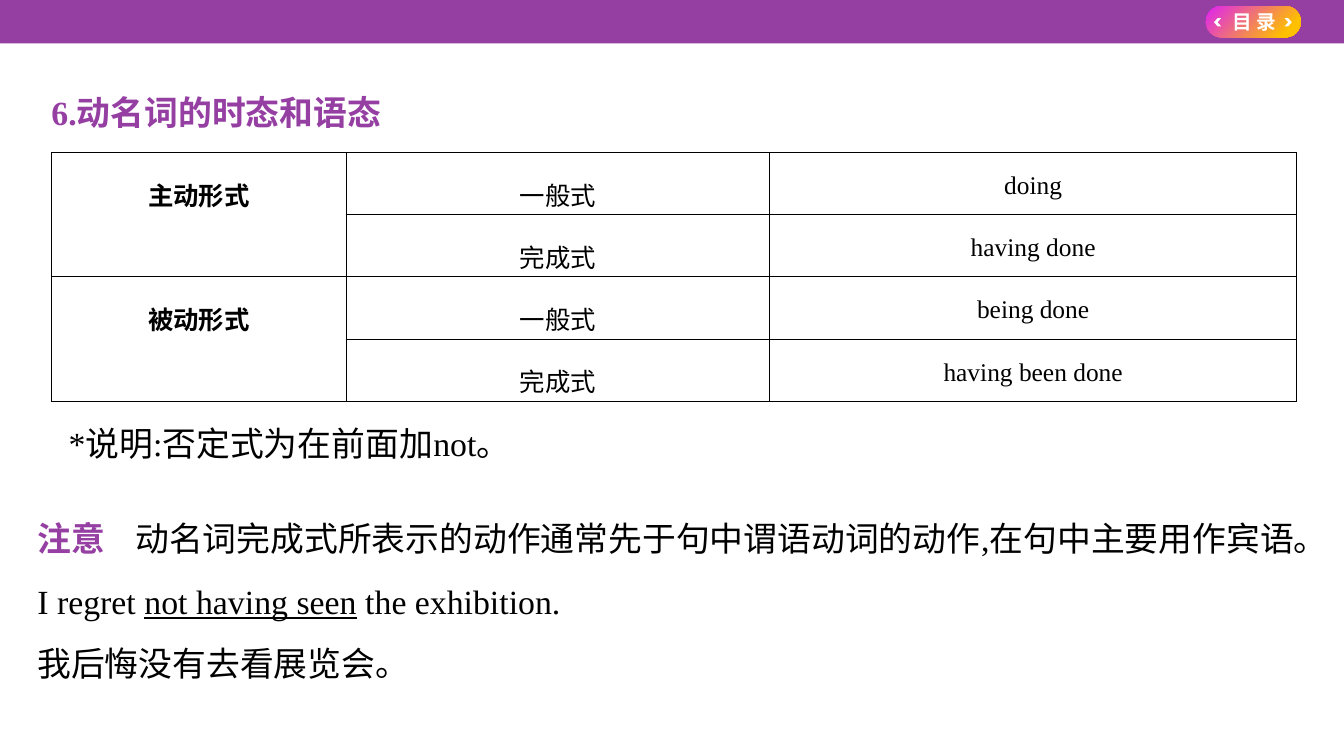
from lxml import etree
from pptx import Presentation
from pptx.dml.color import RGBColor
from pptx.enum.shapes import MSO_SHAPE
from pptx.enum.text import MSO_ANCHOR, PP_ALIGN
from pptx.oxml.ns import qn
from pptx.util import Cm, Inches, Pt

RECTANGLE = MSO_SHAPE.RECTANGLE
PILL = MSO_SHAPE.FLOWCHART_TERMINATOR
CHEVRON = MSO_SHAPE.CHEVRON
CENTER = PP_ALIGN.CENTER
MIDDLE = MSO_ANCHOR.MIDDLE

PURPLE = RGBColor(0x95, 0x3F, 0xA3)
MAGENTA = RGBColor(0xDE, 0x21, 0xF5)
AMBER = RGBColor(0xFF, 0xC0, 0x00)
WHITE = RGBColor(0xFF, 0xFF, 0xFF)
BLACK = RGBColor(0x00, 0x00, 0x00)

SERIF = "Times New Roman"
SANS = "Noto Sans CJK SC"
BODY_SIZE = 24.1
TABLE_SIZE = 18.1

COLUMN_WIDTHS = (2.92, 4.19, 5.22)
TABLE_HEIGHT = 2.46
VERB_FORMS = (
    ("主动形式", "一般式", "doing"),
    ("", "完成式", "having done"),
    ("被动形式", "一般式", "being done"),
    ("", "完成式", "having been done"),
)


def style_span(span, size, color=BLACK, bold=False, underline=False, latin=SERIF):
    font = span.font
    font.size = Pt(size)
    font.bold = bold
    font.underline = underline
    font.color.rgb = color
    font.name = latin
    east_asian = etree.SubElement(span._r.get_or_add_rPr(), qn("a:ea"))
    east_asian.set("typeface", SANS)


def add_figure(page, kind, left, top, width, height, color=None):
    figure = page.shapes.add_shape(
        kind, Inches(left), Inches(top), Inches(width), Inches(height))
    figure.shadow.inherit = False
    figure.line.fill.background()
    if color is not None:
        figure.fill.solid()
        figure.fill.fore_color.rgb = color
    return figure


def add_text(page, left, top, width, height, paragraphs):
    """Add a body text box; each paragraph is a list of (text, style) spans."""
    box = page.shapes.add_textbox(
        Inches(left), Inches(top), Inches(width), Inches(height))
    frame = box.text_frame
    frame.word_wrap = True
    frame.margin_left = frame.margin_right = 0
    frame.margin_top = frame.margin_bottom = 0
    for index, spans in enumerate(paragraphs):
        para = frame.add_paragraph() if index else frame.paragraphs[0]
        para.line_spacing = 1.5
        para.space_before = Pt(1.4)
        for text, style in spans:
            span = para.add_run()
            span.text = text
            style_span(span, BODY_SIZE, **style)
    return box


def add_tab_stop(para, position):
    stops = etree.SubElement(para._p.get_or_add_pPr(), qn("a:tabLst"))
    etree.SubElement(stops, qn("a:tab"), pos=str(Inches(position)), algn="l")


def add_header(page):
    add_figure(page, RECTANGLE, 0, 0, 13.31, 0.43, PURPLE)
    button = add_figure(page, PILL, 11.94, 0.06, 0.94, 0.31)
    button.fill.gradient()
    button.fill.gradient_angle = 315
    stops = zip(button.fill.gradient_stops, (MAGENTA, AMBER), (0, 0.84))
    for stop, color, position in stops:
        stop.color.rgb = color
        stop.position = position

    label = page.shapes.add_textbox(
        Inches(12.09), Inches(0.04), Inches(0.66), Inches(0.34))
    frame = label.text_frame
    frame.word_wrap = True
    frame.vertical_anchor = MIDDLE
    frame.text = "目 录"
    para = frame.paragraphs[0]
    para.alignment = CENTER
    style_span(para.runs[0], 14, WHITE, bold=True, latin=SANS)

    for left, rotation in ((12.72, 0), (12.02, 180)):
        arrow = add_figure(page, CHEVRON, left, 0.18, 0.07, 0.08, WHITE)
        arrow.rotation = rotation


def add_borders(cell):
    properties = cell._tc.get_or_add_tcPr()
    for side in ("a:lnL", "a:lnR", "a:lnT", "a:lnB"):
        line = etree.SubElement(properties, qn(side), w=str(Pt(0.75)))
        fill = etree.SubElement(line, qn("a:solidFill"))
        etree.SubElement(fill, qn("a:srgbClr"), val=str(BLACK))


def fill_cell(cell, text, bold):
    cell.margin_left = cell.margin_right = Inches(0.05)
    cell.margin_top = cell.margin_bottom = Inches(0.05)
    add_borders(cell)
    cell.fill.background()
    cell.text = text
    para = cell.text_frame.paragraphs[0]
    para.alignment = CENTER
    para.line_spacing = 1.5
    for span in para.runs:
        style_span(span, TABLE_SIZE, bold=bold)


def add_verb_table(page):
    rows = len(VERB_FORMS)
    table = page.shapes.add_table(
        rows, len(COLUMN_WIDTHS), Inches(0.51), Inches(1.51),
        Inches(sum(COLUMN_WIDTHS)), Inches(TABLE_HEIGHT)).table
    table.first_row = False
    table.horz_banding = False
    for column, width in zip(table.columns, COLUMN_WIDTHS):
        column.width = Inches(width)
    for row_index, texts in enumerate(VERB_FORMS):
        table.rows[row_index].height = Inches(TABLE_HEIGHT / rows)
        for column_index, text in enumerate(texts):
            fill_cell(table.cell(row_index, column_index), text,
                      bold=column_index == 0)
    for top in range(0, rows, 2):
        table.cell(top, 0).merge(table.cell(top + 1, 0))


def main():
    deck = Presentation()
    deck.slide_width = Cm(33.8)
    deck.slide_height = Cm(19)
    page = deck.slides.add_slide(deck.slide_layouts[6])
    heading = {"color": PURPLE, "bold": True}

    add_header(page)
    add_text(page, 0.51, 0.71, 12.8, 0.54,
             [[("6.动名词的时态和语态", heading)]])
    add_verb_table(page)
    add_text(page, 0.68, 3.98, 12.6, 0.54,
             [[("*说明:否定式为在前面加not。", {})]])
    note = add_text(page, 0.37, 4.92, 12.5, 1.86, [
        [("注意\t", heading),
         ("动名词完成式所表示的动作通常先于句中谓语动词的动作,在句中主要用作宾语。", {})],
        [("I regret ", {}),
         ("not having seen", {"underline": True}),
         (" the exhibition.", {})],
        [("我后悔没有去看展览会。", {})],
    ])
    add_tab_stop(note.text_frame.paragraphs[0], 0.97)
    deck.save("out.pptx")


if __name__ == "__main__":
    main()
